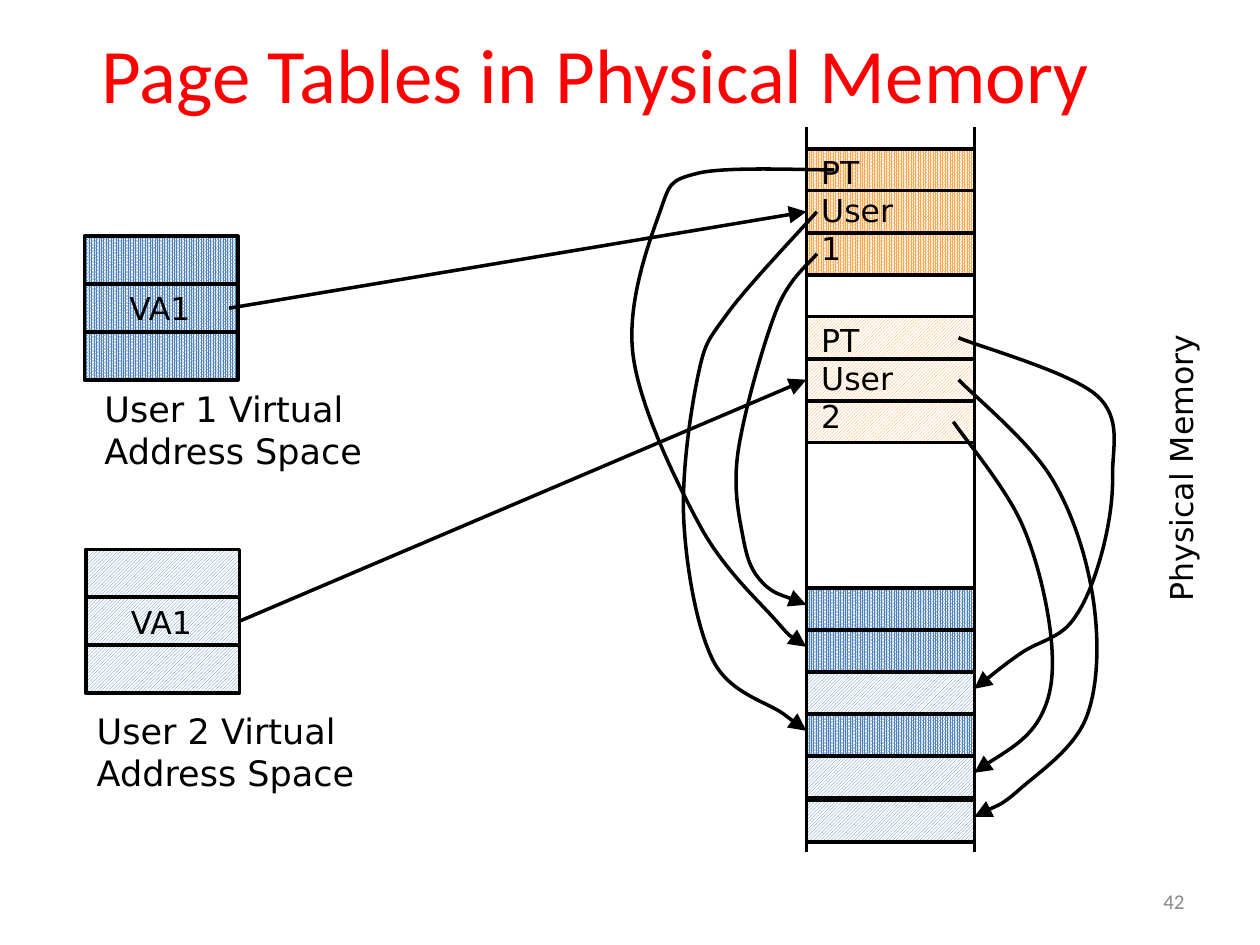
"""Build the slide on page tables in physical memory."""
import lxml.etree
import pptx
import pptx.dml.color
import pptx.enum.dml
import pptx.enum.shapes
import pptx.enum.text
import pptx.oxml.ns
import pptx.util

Pt = pptx.util.Pt
qn = pptx.oxml.ns.qn
RGBColor = pptx.dml.color.RGBColor
ALIGN = pptx.enum.text.PP_ALIGN
ANCHOR = pptx.enum.text.MSO_ANCHOR
RECTANGLE = pptx.enum.shapes.MSO_SHAPE.RECTANGLE
STRAIGHT = pptx.enum.shapes.MSO_CONNECTOR.STRAIGHT
DENSE = pptx.enum.dml.MSO_PATTERN.PERCENT_90
DIAGONAL = pptx.enum.dml.MSO_PATTERN.DARK_UPWARD_DIAGONAL

BLACK = RGBColor(0x00, 0x00, 0x00)
WHITE = RGBColor(0xFF, 0xFF, 0xFF)
RED = RGBColor(0xFF, 0x00, 0x00)
GRAY = RGBColor(0x89, 0x89, 0x89)
BLUE = RGBColor(0x4F, 0x81, 0xBD)
ORANGE = RGBColor(0xFF, 0xA7, 0x4F)

deck = pptx.Presentation()
deck.slide_width, deck.slide_height = Pt(720), Pt(540)
page = deck.slides.add_slide(deck.slide_layouts[6])


def add_label(text, left, top, width, height, size, font="DejaVu Sans", color=BLACK,
              align=ALIGN.LEFT, anchor=ANCHOR.TOP, wrap=True):
    box = page.shapes.add_textbox(Pt(left), Pt(top), Pt(width), Pt(height))
    frame_format = {"word_wrap": wrap, "vertical_anchor": anchor}
    for name, value in frame_format.items():
        setattr(box.text_frame, name, value)
    para = box.text_frame.paragraphs[0]
    para.alignment = align
    span = para.add_run()
    span.text = text
    for name, value in {"name": font, "size": Pt(size)}.items():
        setattr(span.font, name, value)
    span.font.color.rgb = color
    return box


def style_stroke(stroke, arrow=False):
    stroke.line.color.rgb = BLACK
    stroke.line.width = Pt(2)
    properties = stroke.element.spPr
    if arrow:
        lxml.etree.SubElement(properties.find(qn("a:ln")), qn("a:tailEnd"),
                              type="triangle", w="lg", len="lg")
    lxml.etree.SubElement(properties, qn("a:effectLst"))


memory_left, memory_width, row_height = 460.8, 96, 24
memory_right = memory_left + memory_width
memory_top, memory_bottom = 72.4, 486.7
table_tops = {"User 1": 85, "User 2": 181}
unused_top = table_tops["User 1"] + 3 * row_height
frame_tops = [336 + number * row_height for number in range(5)] + [457.2]
frame_owners = ["User 1", "User 1", "User 2", "User 1", "User 2", "User 2"]
patterns = {"User 1": DENSE, "User 2": DIAGONAL}

space_width, space_row = 87.8, 27.4
space_corners = {"User 1": (48.2, 135), "User 2": (49, 313.9)}
caption_corners = {"User 1": (52.6, 217.8), "User 2": (48.2, 401.8)}
pointer_insets = {"User 1": 5, "User 2": 0}

add_label("42", 516.2, 500.4, 167.8, 28.8, 12, "Calibri", GRAY, ALIGN.RIGHT, ANCHOR.MIDDLE)
add_label("Page Tables in Physical Memory", 23.8, 5.8, 632.9, 71.3, 44, "Calibri", RED,
          ALIGN.CENTER, ANCHOR.MIDDLE)

memory_rows = [(top + row * row_height, ORANGE, patterns[user])
               for user, top in table_tops.items() for row in range(3)]
memory_rows.append((unused_top, WHITE, None))
memory_rows += [(top, BLUE, patterns[user]) for top, user in zip(frame_tops, frame_owners)]
blocks = [(memory_left, top, memory_width, row_height, color, pattern)
          for top, color, pattern in memory_rows]
blocks += [(left, top, space_width, 3 * space_row, BLUE, patterns[user])
           for user, (left, top) in space_corners.items()]
for *bounds, color, pattern in blocks:
    block = page.shapes.add_shape(RECTANGLE, *map(Pt, bounds))
    if pattern is None:
        block.fill.solid()
    else:
        block.fill.patterned()
        block.fill.pattern = pattern
        block.fill.back_color.rgb = WHITE
    block.fill.fore_color.rgb = color
    style_stroke(block)

rules = [(x, memory_top, x, memory_bottom) for x in (memory_left, memory_right)]
rules += [(left, top + row * space_row, left + space_width, top + row * space_row)
          for left, top in space_corners.values() for row in (1, 2)]
for ends in rules:
    style_stroke(page.shapes.add_connector(STRAIGHT, *map(Pt, ends)))

for user, (left, top) in space_corners.items():
    add_label("VA1", left + 18.7, top + space_row - 0.5, 50.4, 28.8, 18, wrap=False)
    add_label(f"{user} Virtual Address Space", *caption_corners[user], 187.9, 55.4, 20)
    add_label(f"PT {user}", memory_left + 1.4, table_tops[user] - 0.9, 71, 72.7, 18)
    ends = (left + space_width - pointer_insets[user], top + 1.5 * space_row,
            memory_left, table_tops[user] + 1.5 * row_height)
    style_stroke(page.shapes.add_connector(STRAIGHT, *map(Pt, ends)), arrow=True)

# Each mapping: user, table entry, frame, start inset, bends as (distance from memory, y).
mappings = [
    ("User 1", 0, 1, 16, [(62, 99), (84, 122), (99, 203), (61, 300), (17, 355)]),
    ("User 1", 1, 3, 6, [(45, 179), (62, 215), (70, 298), (53, 378), (13, 408)]),
    ("User 1", 2, 0, 6, [(17, 177), (39, 258), (36, 308), (25, 333)]),
    ("User 2", 0, 2, 9, [(70, 226), (79, 272), (72, 319), (55, 356), (27, 373)]),
    ("User 2", 1, 5, 9, [(44, 273), (68, 343), (64, 410), (26, 451)]),
    ("User 2", 2, 4, 12, [(27, 299), (44, 366), (37, 411)]),
]
memory_sides = {"User 1": (memory_left, -1), "User 2": (memory_right, 1)}
for user, entry, frame, inset, bends in mappings:
    edge, outward = memory_sides[user]
    entry_y = table_tops[user] + (entry + 0.5) * row_height
    frame_y = frame_tops[frame] + 0.4 * row_height
    route = [(edge + outward * distance, y)
             for distance, y in [(-inset, entry_y), *bends, (0, frame_y)]]
    padded = [route[0], *route, route[-1]]
    controls = []
    for before, start, end, after in zip(padded, padded[1:], padded[2:], padded[3:]):
        leave = [s + (e - b) / 6 for b, s, e in zip(before, start, end)]
        arrive = [e - (a - s) / 6 for s, e, a in zip(start, end, after)]
        controls += [leave, arrive, end]

    builder = page.shapes.build_freeform(*map(Pt, route[0]))
    builder.add_line_segments([(Pt(x), Pt(y)) for x, y in controls], close=False)
    curve = builder.convert_to_shape()
    curve.fill.background()
    style_stroke(curve, arrow=True)
    segments = list(curve.element.iter(qn("a:lnTo")))
    outline = segments[0].getparent()
    for first in range(0, len(segments), 3):
        bezier = lxml.etree.SubElement(outline, qn("a:cubicBezTo"))
        for segment in segments[first:first + 3]:
            bezier.append(segment[0])
            outline.remove(segment)

memory_caption = add_label("Physical Memory", 583.2, 244.8, 182.9, 28.8, 18)
memory_caption.rotation = 270

deck.save("out.pptx")
